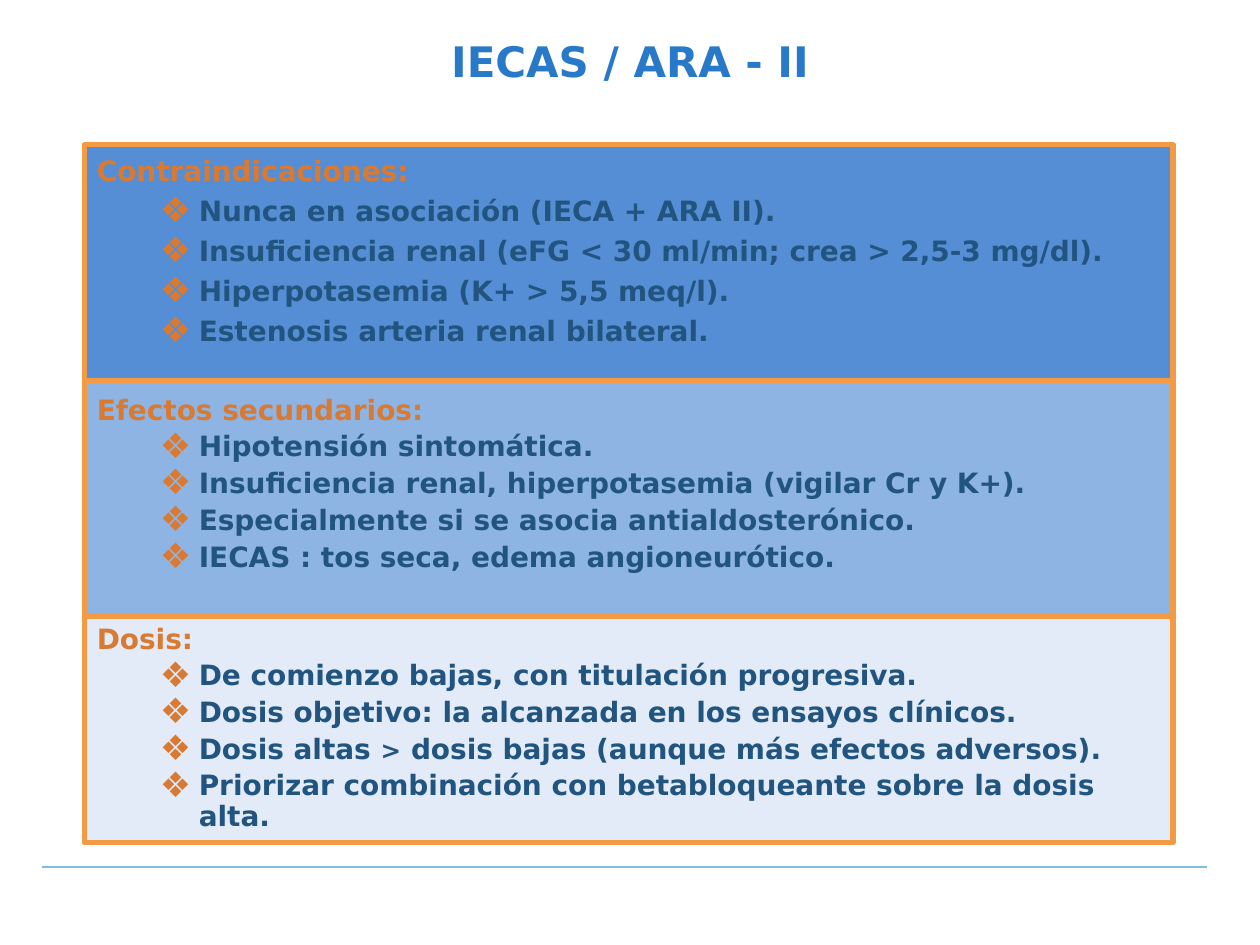
from dataclasses import dataclass

from lxml import etree
from pptx import Presentation
from pptx import util as u
from pptx.dml.color import RGBColor
from pptx.enum import shapes, text
from pptx.oxml.ns import qn


@dataclass(frozen=True)
class Theme:
    """Colours and type sizes of the slide."""
    font: str = "DejaVu Sans"
    title: str = "287AC8"
    heading: str = "D97A33"
    body: str = "21557F"
    border: str = "F39A44"
    rule: str = "7FBDE3"
    title_size: int = 24
    body_size: int = 16
    sign_size: int = 14
    space: float = 3.7


THEME = Theme()
LEFT, WIDTH, TOP = 0.67, 8.64, 1.15

PANELS = [
    dict(heading="Contraindicaciones:", fill="558ED5", height=1.87,
         items=["Nunca en asociación (IECA + ARA II).",
                "Insuficiencia renal (eFG < 30 ml/min; crea > 2,5-3 mg/dl).",
                "Hiperpotasemia (K+ > 5,5 meq/l).",
                "Estenosis arteria renal bilateral."]),
    dict(heading="Efectos secundarios:", fill="8EB4E3", height=1.87,
         heading_spacing=1.1, spacing=0.9,
         items=["Hipotensión sintomática.",
                "Insuficiencia renal, hiperpotasemia (vigilar Cr y K+).",
                "Especialmente si se asocia antialdosterónico.",
                "IECAS : tos seca, edema angioneurótico."]),
    dict(heading="Dosis:", fill="C6D9F1", height=1.8, alpha=50,
         heading_spacing=0.9, spacing=0.9,
         items=["De comienzo bajas, con titulación progresiva.",
                "Dosis objetivo: la alcanzada en los ensayos clínicos.",
                ("Dosis altas ", ">", " dosis bajas (aunque más efectos adversos)."),
                "Priorizar combinación con betabloqueante sobre la dosis alta."]),
]


def style_run(r, color, size):
    """Format a run in the bold theme font."""
    r.font.name, r.font.bold, r.font.size = THEME.font, True, u.Pt(size)
    r.font.color.rgb = RGBColor.from_string(color)


def add_bullet(p):
    """Give a paragraph a hanging diamond bullet."""
    pPr = p._p.get_or_add_pPr()
    pPr.set("marL", str(u.Inches(0.81)))
    pPr.set("indent", str(u.Inches(-0.31)))
    color = etree.SubElement(pPr, qn("a:buClr"))
    etree.SubElement(color, qn("a:srgbClr"), val=THEME.heading)
    etree.SubElement(pPr, qn("a:buSzPct"), val="125000")
    etree.SubElement(pPr, qn("a:buFont"), typeface=THEME.font)
    etree.SubElement(pPr, qn("a:buChar"), char="❖")


def add_item(tf, item, spacing):
    """Add one bulleted line, given as a string or as its runs."""
    p = tf.add_paragraph()
    p.level = 1
    add_bullet(p)
    p.alignment = text.PP_ALIGN.LEFT
    p.line_spacing, p.space_before = spacing, u.Pt(THEME.space)
    for part in [item] if isinstance(item, str) else item:
        r = p.add_run()
        r.text = part
        style_run(r, THEME.body, THEME.sign_size if part == ">" else THEME.body_size)


def add_panel(s, top, heading, fill, height, items,
              heading_spacing=1.0, spacing=1.0, alpha=None):
    """Draw a bordered panel with a heading and its bullets."""
    sp = s.shapes.add_shape(shapes.MSO_SHAPE.RECTANGLE, u.Inches(LEFT), u.Inches(top),
                            u.Inches(WIDTH), u.Inches(height))
    sp.shadow.inherit = False
    sp.fill.solid()
    sp.fill.fore_color.rgb = RGBColor.from_string(fill)
    if alpha:
        color = sp._element.spPr.find(qn("a:solidFill")).find(qn("a:srgbClr"))
        etree.SubElement(color, qn("a:alpha"), val=str(alpha * 1000))
    sp.line.color.rgb = RGBColor.from_string(THEME.border)
    sp.line.width = u.Pt(3)
    tf = sp.text_frame
    tf.word_wrap, tf.vertical_anchor = True, text.MSO_ANCHOR.TOP
    tf.margin_top = u.Inches(0.07)
    tf.text = heading
    p = tf.paragraphs[0]
    p.alignment, p.line_spacing, p.space_before = text.PP_ALIGN.LEFT, heading_spacing, u.Pt(0)
    style_run(p.runs[0], THEME.heading, THEME.body_size)
    for item in items:
        add_item(tf, item, spacing)


def add_title(s, words):
    """Place and format the title placeholder."""
    sp = s.shapes.title
    sp.left, sp.top, sp.width, sp.height = (u.Inches(n) for n in (0, 0.16, 10, 0.65))
    tf = sp.text_frame
    tf.text = words
    tf.vertical_anchor = text.MSO_ANCHOR.MIDDLE
    p = tf.paragraphs[0]
    p.alignment = text.PP_ALIGN.CENTER
    style_run(p.runs[0], THEME.title, THEME.title_size)


def add_rule(s, left, right, y):
    """Draw the thin footer rule."""
    line = s.shapes.add_connector(shapes.MSO_CONNECTOR.STRAIGHT, u.Inches(left),
                                  u.Inches(y), u.Inches(right), u.Inches(y))
    line.line.color.rgb = RGBColor.from_string(THEME.rule)
    line.line.width = u.Pt(0.75)
    etree.SubElement(line._element.spPr, qn("a:effectLst"))


def main():
    """Build and save the slide."""
    prs = Presentation()
    prs.slide_width, prs.slide_height = u.Inches(10), u.Inches(7.5)
    s = prs.slides.add_slide(prs.slide_layouts[5])
    add_rule(s, 0.33, 9.58, 6.88)
    top = TOP
    for panel in PANELS:
        add_panel(s, top, **panel)
        top += panel["height"]
    add_title(s, "IECAS / ARA - II")
    prs.save("out.pptx")


if __name__ == "__main__":
    main()
